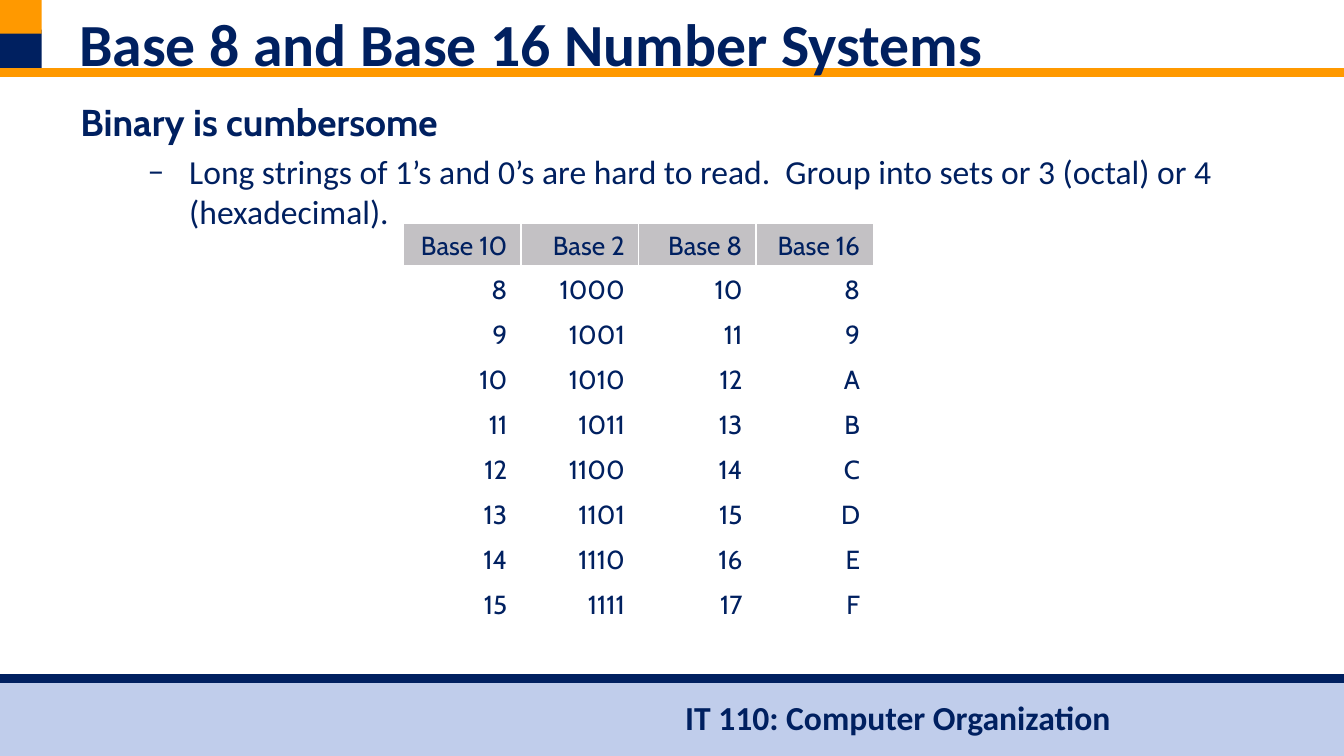
from dataclasses import dataclass

from lxml import etree
from pptx import Presentation
from pptx.dml.color import RGBColor
from pptx.enum.shapes import MSO_CONNECTOR, MSO_SHAPE
from pptx.enum.text import PP_ALIGN
from pptx.oxml.ns import qn
from pptx.util import Inches, Pt

RECTANGLE = MSO_SHAPE.RECTANGLE
STRAIGHT = MSO_CONNECTOR.STRAIGHT
RIGHT = PP_ALIGN.RIGHT

NAVY = "002060"
ORANGE = "FF9900"
PALE_BLUE = "C0CDEB"
GREY = "C3C1C4"
WHITE = "FFFFFF"

SLIDE_WIDTH = 10
SLIDE_HEIGHT = SLIDE_WIDTH * 9 / 16
FOOTER_TOP = 5.06
HEADERS = ["Base 10", "Base 2", "Base 8", "Base 16"]
VALUES = range(8, 16)
ROW_HEIGHT = 0.21
BORDER_WIDTHS = {"lnL": 1, "lnR": 1, "lnT": 1, "lnB": 3}


@dataclass
class Block:
    left: float
    top: float
    width: float
    height: float
    color: str


@dataclass
class Line:
    text: str
    size: float
    font: str = "Calibri"
    bold: bool = True
    bullet: str = ""
    margin: float = 0
    indent: float = 0
    space_before: float = 0


def rgb(color: str) -> RGBColor:
    return RGBColor.from_string(color)


def add_block(slide, block: Block) -> None:
    shape = slide.shapes.add_shape(
        RECTANGLE, Inches(block.left), Inches(block.top),
        Inches(block.width), Inches(block.height))
    shape.shadow.inherit = False
    shape.fill.solid()
    shape.fill.fore_color.rgb = rgb(block.color)
    shape.line.fill.background()


def add_rule(slide, top: float, color: str) -> None:
    """Draw a horizontal line across the whole slide."""
    rule = slide.shapes.add_connector(
        STRAIGHT, 0, Inches(top), Inches(SLIDE_WIDTH), Inches(top))
    rule.line.color.rgb = rgb(color)
    rule.line.width = Pt(4.5)
    etree.SubElement(rule._element.spPr, qn("a:effectLst"))


def format_font(font, name: str, size: float, bold: bool) -> None:
    font.name = name
    font.size = Pt(size)
    font.bold = bold
    font.color.rgb = rgb(NAVY)


def set_indent(paragraph, line: Line) -> None:
    """Set the hanging indent and the bullet of a paragraph."""
    properties = paragraph._p.get_or_add_pPr()
    properties.set("marL", str(Inches(line.margin)))
    properties.set("indent", str(Inches(line.indent)))
    if line.bullet:
        etree.SubElement(properties, qn("a:buFont"), typeface=line.font)
        etree.SubElement(properties, qn("a:buChar"), char=line.bullet)
    else:
        etree.SubElement(properties, qn("a:buNone"))


def add_text(slide, left: float, top: float, width: float, height: float,
             lines: list[Line]) -> None:
    box = slide.shapes.add_textbox(
        Inches(left), Inches(top), Inches(width), Inches(height))
    text_frame = box.text_frame
    text_frame.word_wrap = True
    text_frame.text = "\n".join(line.text for line in lines)
    for paragraph, line in zip(text_frame.paragraphs, lines):
        set_indent(paragraph, line)
        if line.space_before:
            paragraph.space_before = Pt(line.space_before)
        format_font(paragraph.runs[0].font, line.font, line.size, line.bold)


def set_header_borders(cell) -> None:
    """Give a header cell white borders, placed ahead of its fill."""
    properties = cell._tc.get_or_add_tcPr()
    for position, (side, width) in enumerate(BORDER_WIDTHS.items()):
        border = etree.Element(qn(f"a:{side}"), w=str(Pt(width)))
        fill = etree.SubElement(border, qn("a:solidFill"))
        etree.SubElement(fill, qn("a:srgbClr"), val=WHITE)
        properties.insert(position, border)


def add_base_table(slide) -> None:
    rows = [HEADERS] + [[str(n), f"{n:b}", f"{n:o}", f"{n:X}"] for n in VALUES]
    table = slide.shapes.add_table(
        len(rows), len(HEADERS), Inches(3), Inches(1.66),
        Inches(3.5), Inches(ROW_HEIGHT * len(rows))).table
    table.first_row = False
    table.horz_banding = False
    for row_index, row in enumerate(rows):
        is_header = row_index == 0
        for column_index, text in enumerate(row):
            cell = table.cell(row_index, column_index)
            cell.text_frame.text = text
            cell.fill.solid()
            cell.fill.fore_color.rgb = rgb(GREY if is_header else WHITE)
            if is_header:
                set_header_borders(cell)
            paragraph = cell.text_frame.paragraphs[0]
            paragraph.alignment = RIGHT
            format_font(paragraph.runs[0].font, "Cabin", 14, False)


def main() -> None:
    presentation = Presentation()
    presentation.slide_width = Inches(SLIDE_WIDTH)
    presentation.slide_height = Inches(SLIDE_HEIGHT)
    slide = presentation.slides.add_slide(presentation.slide_layouts[6])

    add_block(slide, Block(0, FOOTER_TOP, SLIDE_WIDTH,
                           SLIDE_HEIGHT - FOOTER_TOP, PALE_BLUE))
    add_text(slide, 5, 5.14, 3.39, 0.4,
             [Line("IT 110: Computer Organization", 18)])
    add_block(slide, Block(0, 0.22, 0.31, 0.32, NAVY))
    add_rule(slide, 0.54, ORANGE)
    add_block(slide, Block(0, 0, 0.31, 0.25, ORANGE))
    add_rule(slide, 5.05, NAVY)

    add_base_table(slide)
    add_text(slide, 0.5, 0.69, 9, 3.71, [
        Line("Binary is cumbersome", 20, font="Cabin",
             margin=0.38, indent=-0.38),
        Line("Long strings of 1’s and 0’s are hard to read.  Group into sets "
             "or 3 (octal) or 4 (hexadecimal).", 18, bold=False, bullet="–",
             margin=0.81, indent=-0.31, space_before=3.6),
    ])
    add_text(slide, 0.49, 0, 9.02, 0.53,
             [Line("Base 8 and Base 16 Number Systems", 32)])

    presentation.save("out.pptx")


if __name__ == "__main__":
    main()
